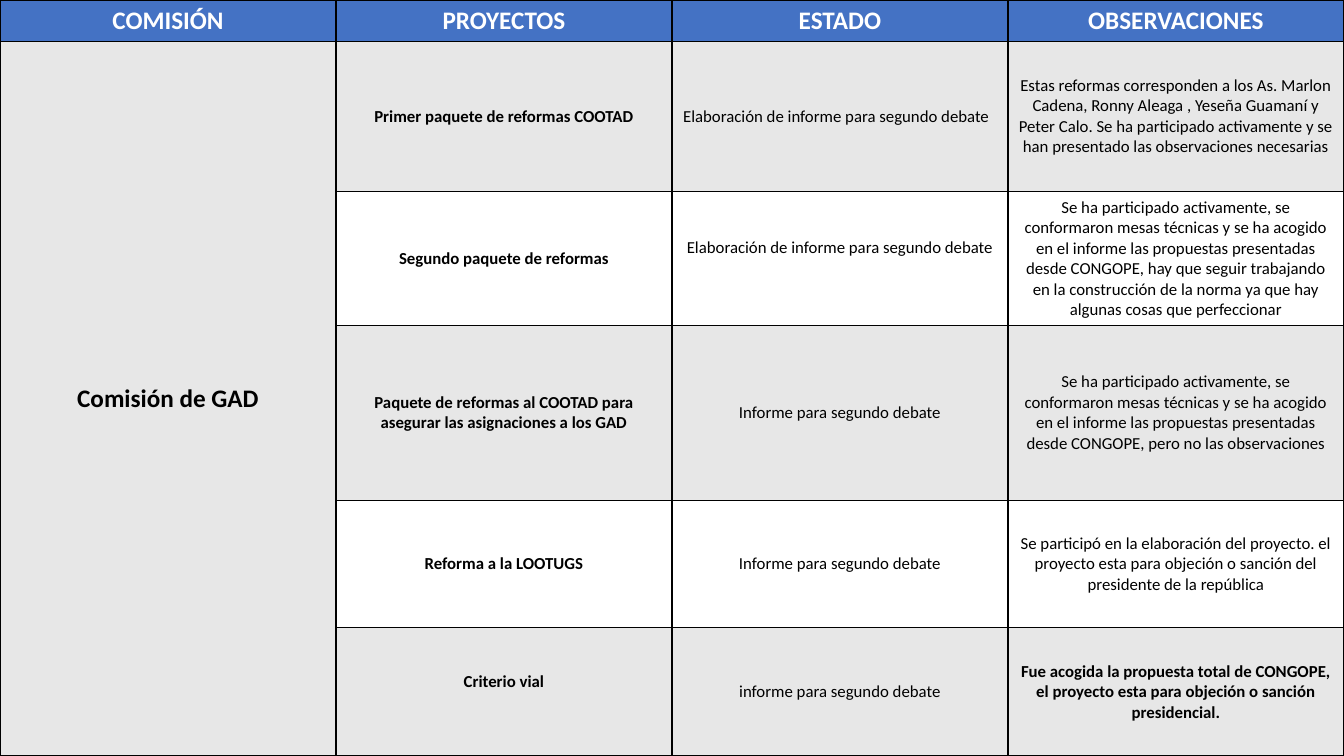
from dataclasses import dataclass
from lxml.etree import SubElement
from pptx import Presentation
from pptx.dml.color import RGBColor
from pptx.enum.text import MSO_ANCHOR, PP_ALIGN
from pptx.oxml.ns import qn
from pptx.util import Pt


@dataclass(frozen=True)
class Theme:
    font: str = "Calibri"
    head: str = "4472C4"
    band: str = "E7E7E7"
    white: str = "FFFFFF"
    black: str = "000000"
    big: int = 18
    small: int = 12
    line: int = 1


THEME = Theme()
WIDE, HIGH = 960, 540
HEIGHTS = [29.5, 107.5, 95.5, 125, 91, 91.5]
HEADS = ["COMISIÓN", "PROYECTOS", "ESTADO", "OBSERVACIONES"]
GROUP = "Comisión de GAD"
SHARED = ("Se ha participado activamente, se conformaron mesas técnicas y se ha "
          "acogido en el informe las propuestas presentadas desde CONGOPE, ")
ROWS = [
    ("Primer paquete de reformas COOTAD",
     "Elaboración de informe para segundo debate",
     "Estas reformas corresponden a los As. Marlon Cadena, Ronny Aleaga , "
     "Yeseña Guamaní y Peter Calo. Se ha participado activamente y se han "
     "presentado las observaciones necesarias"),
    ("Segundo paquete de reformas",
     "Elaboración de informe para segundo debate",
     SHARED + "hay que seguir trabajando en la construcción de la norma ya que "
     "hay algunas cosas que perfeccionar"),
    ("Paquete de reformas al COOTAD para asegurar las asignaciones a los GAD",
     "Informe para segundo debate",
     SHARED + "pero no las observaciones"),
    ("Reforma a la LOOTUGS",
     "Informe para segundo debate",
     "Se participó en la elaboración del proyecto. el proyecto esta para "
     "objeción o sanción del presidente de la república"),
    ("Criterio vial",
     "informe para segundo debate",
     "Fue acogida la propuesta total de CONGOPE, el proyecto esta para "
     "objeción o sanción presidencial."),
]
# Cells whose text sits off centre: (row, column) -> margins in points
INSETS = {
    (1, 2): {"right": 12.5},
    (2, 2): {"bottom": 19.5},
    (5, 1): {"bottom": 18},
}
STRONG = {(5, 3)}


def write(cell, text, size=THEME.small, color=THEME.black, bold=False,
          anchor=MSO_ANCHOR.MIDDLE, right=7.2, bottom=3.6):
    cell.vertical_anchor = anchor
    cell.margin_right, cell.margin_bottom = Pt(right), Pt(bottom)
    para = cell.text_frame.paragraphs[0]
    para.alignment = PP_ALIGN.CENTER
    run = para.add_run()
    run.text = text
    font = run.font
    font.name, font.size, font.bold = THEME.font, Pt(size), bold
    font.color.rgb = RGBColor.from_string(color)


def paint(cell, color):
    # Borders come before the fill in the cell properties
    props = cell._tc.get_or_add_tcPr()
    for side in ("a:lnL", "a:lnR", "a:lnT", "a:lnB"):
        line = SubElement(props, qn(side), w=str(Pt(THEME.line)))
        fill = SubElement(line, qn("a:solidFill"))
        SubElement(fill, qn("a:srgbClr"), val=THEME.black)
    cell.fill.solid()
    cell.fill.fore_color.rgb = RGBColor.from_string(color)


def add_grid(slide, left, top, width, height):
    count = len(HEADS)
    frame = slide.shapes.add_table(len(HEIGHTS), count, Pt(left), Pt(top),
                                   Pt(width), Pt(height))
    table = frame.table
    for col in table.columns:
        col.width = Pt(width / count)
    for row, size in zip(table.rows, HEIGHTS):
        row.height = Pt(height * size / sum(HEIGHTS))

    # Fills and borders
    for i, row in enumerate(table.rows):
        for j, cell in enumerate(row.cells):
            banded = i % 2 or j == 0
            body = THEME.band if banded else THEME.white
            paint(cell, body if i else THEME.head)

    # Header row
    for j, text in enumerate(HEADS):
        write(table.cell(0, j), text, size=THEME.big, color=THEME.white,
              bold=True, anchor=MSO_ANCHOR.TOP)

    # Commission, merged down the first column
    group = table.cell(1, 0)
    group.merge(table.cell(len(ROWS), 0))
    write(group, GROUP, size=THEME.big, bold=True)

    # Projects
    for i, texts in enumerate(ROWS, 1):
        for j, text in enumerate(texts, 1):
            write(table.cell(i, j), text, bold=j == 1 or (i, j) in STRONG,
                  **INSETS.get((i, j), {}))


def main():
    deck = Presentation()
    deck.slide_width, deck.slide_height = Pt(WIDE), Pt(HIGH)
    slide = deck.slides.add_slide(deck.slide_layouts[6])
    add_grid(slide, 0, 0, WIDE, HIGH)
    deck.save("out.pptx")


if __name__ == "__main__":
    main()
